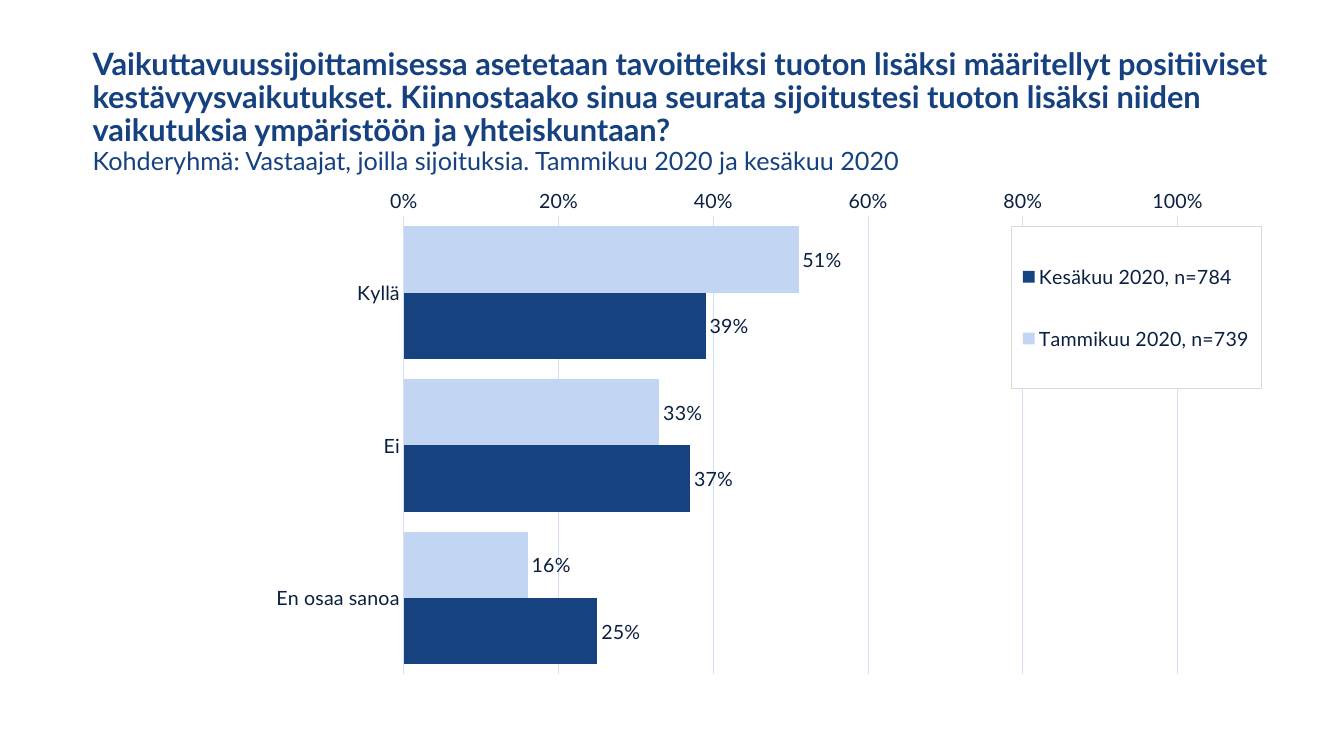
from lxml import etree
from pptx import Presentation
from pptx.chart.data import CategoryChartData
from pptx.dml.color import RGBColor
from pptx.enum.chart import XL_CHART_TYPE as ChartType
from pptx.enum.chart import XL_LABEL_POSITION as LabelPosition
from pptx.enum.chart import XL_LEGEND_POSITION as LegendPosition
from pptx.enum.chart import XL_TICK_MARK as TickMark
from pptx.enum.text import MSO_ANCHOR, PP_ALIGN
from pptx.oxml import parse_xml
from pptx.oxml.ns import nsdecls, qn
from pptx.util import Cm, Pt

QUESTION = (
    "Vaikuttavuussijoittamisessa asetetaan tavoitteiksi tuoton lisäksi määritellyt "
    "positiiviset kestävyysvaikutukset. Kiinnostaako sinua seurata sijoitustesi tuoton "
    "lisäksi niiden vaikutuksia ympäristöön ja yhteiskuntaan?"
)
TARGET_GROUP = "Kohderyhmä: Vastaajat, joilla sijoituksia. Tammikuu 2020 ja kesäkuu 2020"
ANSWERS = ["Kyllä", "Ei", "En osaa sanoa"]
SURVEYS = [
    ("Tammikuu 2020, n=739", [0.51, 0.33, 0.16], "C2D6F4"),
    ("Kesäkuu 2020, n=784", [0.39, 0.37, 0.25], "164280"),
]
FONT = "Lato"
TITLE_COLOR, TEXT_COLOR, GRID_COLOR = "164180", "0B2040", "D1E0F7"
PLOT_AREA = (0.27, 0.06, 0.65, 0.88)
LEGEND_AREA = (0.78, 0.08, 0.21, 0.31)


def rgb(code):
    return RGBColor.from_string(code)


def style_font(font, size, color, bold=False):
    font.name, font.size, font.bold = FONT, Pt(size), bold
    font.color.rgb = rgb(color)


def style_line(line, color):
    line.color.rgb = rgb(color)
    line.width = Pt(0.75)


def manual_layout(area, inner=False):
    """Return a c:layout element; area holds x, y, w, h as shares of the chart."""
    layout = parse_xml(f"<c:layout {nsdecls('c')}><c:manualLayout/></c:layout>")
    settings = [("layoutTarget", "inner")] if inner else []
    settings += [("xMode", "edge"), ("yMode", "edge"), *zip("xywh", area)]
    for tag, value in settings:
        etree.SubElement(layout[0], qn(f"c:{tag}")).set("val", str(value))
    return layout


def remove_layout(element):
    for old in element.findall(qn("c:layout")):
        element.remove(old)


def add_title(page):
    title = page.shapes.title
    title.left, title.top, title.width, title.height = Cm(2.08), Cm(0.99), Cm(31.39), Cm(3.68)
    frame = title.text_frame
    frame.word_wrap = True
    frame.vertical_anchor = MSO_ANCHOR.MIDDLE
    para = frame.paragraphs[0]
    para.alignment = PP_ALIGN.LEFT
    para.line_spacing = 0.9
    span = para.add_run()
    span.text = QUESTION
    style_font(span.font, 22, TITLE_COLOR, bold=True)
    para.add_line_break()
    span = para.add_run()
    span.text = TARGET_GROUP
    style_font(span.font, 18, TITLE_COLOR)


def style_axes(chart):
    answers, shares = chart.category_axis, chart.value_axis
    for axis in (answers, shares):
        axis.major_tick_mark = axis.minor_tick_mark = TickMark.NONE
        style_font(axis.tick_labels.font, 14, TEXT_COLOR)
    answers.reverse_order = True
    style_line(answers.format.line, GRID_COLOR)
    shares.minimum_scale, shares.maximum_scale, shares.major_unit = 0, 1, 0.2
    shares.has_major_gridlines = True
    style_line(shares.major_gridlines.format.line, GRID_COLOR)
    shares.format.line.fill.background()
    shares.tick_labels.number_format = "0%"
    shares.tick_labels.number_format_is_linked = False


def style_bars(plot):
    plot.gap_width, plot.overlap, plot.vary_by_categories = 30, 0, False
    for series, (_, _, color) in zip(plot.series, SURVEYS):
        series.format.fill.solid()
        series.format.fill.fore_color.rgb = rgb(color)
        labels = series.data_labels
        labels.show_value = True
        labels.number_format, labels.number_format_is_linked = "0%", False
        labels.position = LabelPosition.OUTSIDE_END
        style_font(labels.font, 14, TEXT_COLOR)


def add_legend(chart):
    chart.has_legend = True
    legend = chart.legend
    legend.position = LegendPosition.BOTTOM
    legend.include_in_layout = False
    style_font(legend.font, 14, TEXT_COLOR)
    element = legend._element
    remove_layout(element)
    element.find(qn("c:legendPos")).addnext(manual_layout(LEGEND_AREA))
    frame = parse_xml(
        f"<c:spPr {nsdecls('c', 'a')}>"
        '<a:solidFill><a:srgbClr val="FFFFFF"/></a:solidFill>'
        '<a:ln w="9525"><a:solidFill><a:srgbClr val="D9D9D9"/></a:solidFill></a:ln>'
        "</c:spPr>"
    )
    element.find(qn("c:txPr")).addprevious(frame)


def add_survey_chart(page):
    data = CategoryChartData(number_format="0%")
    data.categories = ANSWERS
    for name, values, _ in SURVEYS:
        data.add_series(name, values)
    chart = page.shapes.add_chart(
        ChartType.BAR_CLUSTERED, Cm(2.08), Cm(4.67), Cm(30), Cm(13.11), data
    ).chart
    chart.has_title = False
    style_font(chart.font, 14, TEXT_COLOR)
    style_axes(chart)
    style_bars(chart.plots[0])
    add_legend(chart)
    plot_area = chart._chartSpace.chart.plotArea
    remove_layout(plot_area)
    plot_area.insert(0, manual_layout(PLOT_AREA, inner=True))


def main():
    deck = Presentation()
    deck.slide_width, deck.slide_height = Cm(33.87), Cm(19.05)
    page = deck.slides.add_slide(deck.slide_layouts[5])
    add_title(page)
    add_survey_chart(page)
    deck.save("out.pptx")


if __name__ == "__main__":
    main()
